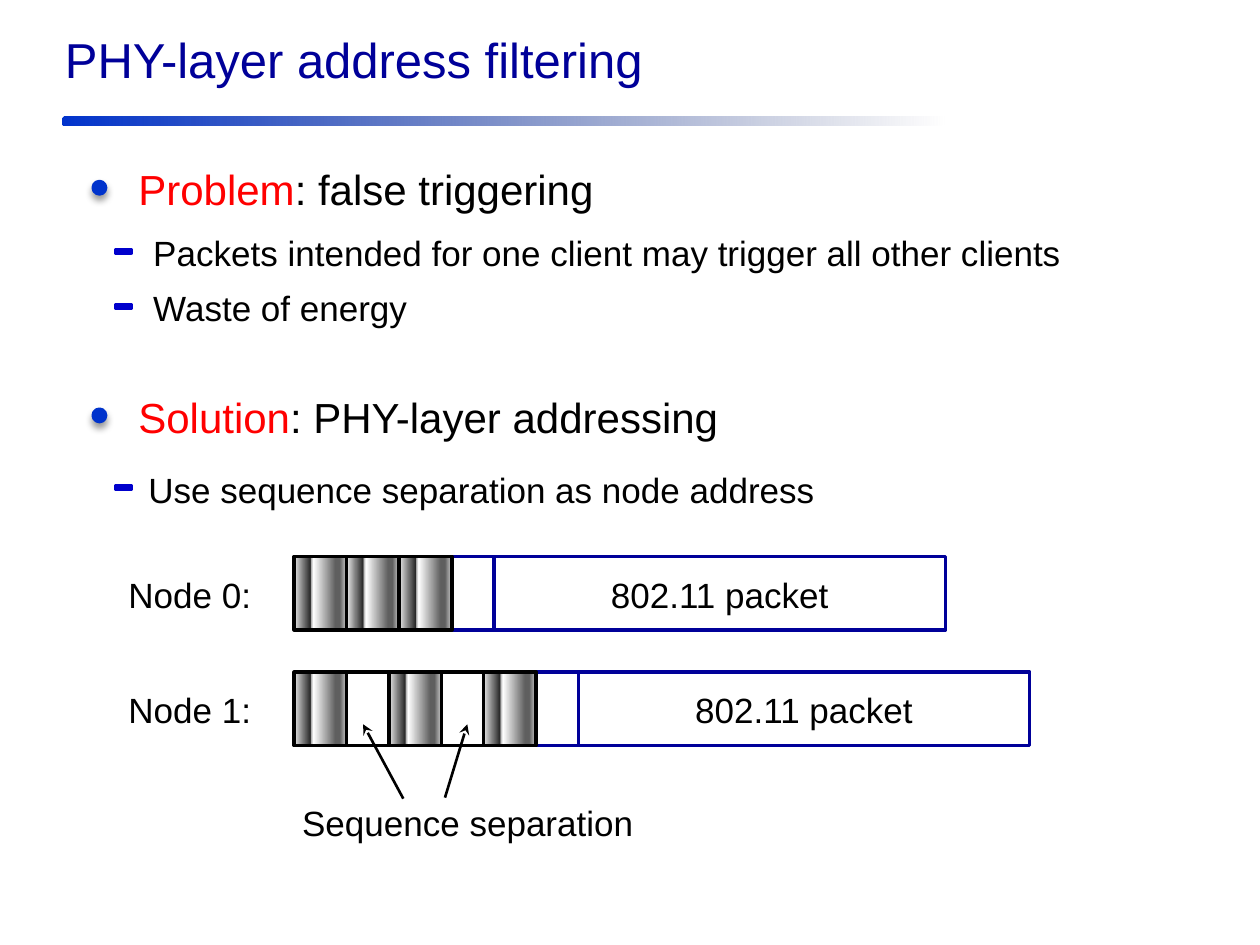
from lxml import etree
from pptx import Presentation
from pptx.dml.color import RGBColor
from pptx.enum.shapes import MSO_CONNECTOR, MSO_SHAPE
from pptx.enum.text import MSO_AUTO_SIZE, PP_ALIGN
from pptx.oxml.ns import qn
from pptx.util import Cm, Pt

RECT, OVAL, ROUND = MSO_SHAPE.RECTANGLE, MSO_SHAPE.OVAL, MSO_SHAPE.ROUNDED_RECTANGLE
LEFT, MID = PP_ALIGN.LEFT, PP_ALIGN.CENTER
GROW = MSO_AUTO_SIZE.SHAPE_TO_FIT_TEXT
LINE = MSO_CONNECTOR.STRAIGHT

COLORS = {"navy": "000099", "blue": "0033CC", "dash": "0000CC",
          "red": "FF0000", "black": "000000"}
FADE = [(0, "0033CC", 100), (100, "00185E", 0)]
METAL = [(0, "CBCBCB", 100), (13, "5F5F5F", 100), (21, "5F5F5F", 100),
         (63, "FFFFFF", 100), (67, "B2B2B2", 100), (69, "292929", 100),
         (82, "777777", 100), (100, "EAEAEA", 100)]

TITLE = "PHY-layer address filtering"
HEADS = [(3.18, "Problem", ": false triggering"),
         (7.77, "Solution", ": PHY-layer addressing")]
ITEMS = [(2.84, 4.55, "Packets intended for one client may trigger all other clients"),
         (2.84, 5.66, "Waste of energy"),
         (2.74, 9.31, "Use sequence separation as node address")]
NODES = [(11.22, "Node 0:", ["seq", "seq", "seq", "guard", "packet"]),
         (13.55, "Node 1:", ["seq", "gap", "seq", "gap", "seq", "guard", "packet"])]
PACKET = "802.11 packet"
NOTE = "Sequence separation"
ARROWS = [(8.13, 16.1, 7.32, 14.6), (8.97, 16.08, 9.42, 14.6)]

WIDTHS = {"seq": 1.06, "gap": 0.85, "guard": 0.85, "packet": 9.1}
EDGES = {"seq": "black", "gap": "black", "guard": "navy", "packet": "navy"}
START, TALL = 5.93, 1.48

deck = Presentation()
deck.slide_width, deck.slide_height = Cm(25.4), Cm(19.05)
slide = deck.slides.add_slide(deck.slide_layouts[6])
shapes = slide.shapes


def rgb(name):
    return RGBColor.from_string(COLORS[name])


def add_text(x, y, w, h, runs, size=20, align=LEFT):
    box = shapes.add_textbox(Cm(x), Cm(y), Cm(w), Cm(h))
    frame = box.text_frame
    frame.word_wrap = True
    frame.auto_size = GROW
    para = frame.paragraphs[0]
    para.alignment = align
    para.font.size = Pt(size)
    para.font.name = "Arial"
    for text, color in runs:
        run = para.add_run()
        run.text = text
        run.font.color.rgb = rgb(color)


def add_box(kind, x, y, w, h, fill=None, edge=None):
    box = shapes.add_shape(kind, Cm(x), Cm(y), Cm(w), Cm(h))
    box.shadow.inherit = False
    if fill:
        box.fill.solid()
        box.fill.fore_color.rgb = rgb(fill)
    else:
        box.fill.background()
    if edge:
        box.line.color.rgb = rgb(edge)
        box.line.width = Pt(2)
    else:
        box.line.fill.background()
    return box


def add_color(node, color, alpha):
    tint = etree.SubElement(node, qn("a:srgbClr"), val=color)
    if alpha < 100:
        etree.SubElement(tint, qn("a:alpha"), val=str(alpha * 1000))


def blend(box, stops, angle):
    box.fill.gradient()
    box.fill.gradient_angle = angle
    group = box.fill._xPr.find(".//" + qn("a:gsLst"))
    for old in list(group):
        group.remove(old)
    for pos, color, alpha in stops:
        stop = etree.SubElement(group, qn("a:gs"), pos=str(pos * 1000))
        add_color(stop, color, alpha)


def add_shade(box):
    effects = box._element.spPr.find(qn("a:effectLst"))
    shade = etree.SubElement(effects, qn("a:outerShdw"), blurRad=str(Pt(4)),
                             dist=str(Pt(3)), dir="5400000", rotWithShape="0")
    add_color(shade, COLORS["black"], 40)


def add_frame(y, label, cells):
    add_text(2.34, y + 0.21, 3.38, 1.12, [(label, "black")])
    x = START + sum(WIDTHS[cell] for cell in cells)
    for cell in reversed(cells):
        wide = WIDTHS[cell]
        x -= wide
        box = add_box(RECT, x, y, wide, TALL, edge=EDGES[cell])
        if cell == "seq":
            blend(box, METAL, 180)
        elif cell == "packet":
            add_text(x, y + 0.21, wide, 1.12, [(PACKET, "black")], align=MID)


def add_arrow(x1, y1, x2, y2):
    arrow = shapes.add_connector(LINE, Cm(x1), Cm(y1), Cm(x2), Cm(y2))
    arrow.line.color.rgb = rgb("black")
    arrow.line.width = Pt(1.5)
    etree.SubElement(arrow.line._get_or_add_ln(), qn("a:tailEnd"), type="stealth")
    etree.SubElement(arrow._element.spPr, qn("a:effectLst"))


rule = add_box(ROUND, 1.27, 2.36, 17.78, 0.18)
rule.adjustments[0] = 0.17
blend(rule, FADE, 0)
add_text(1.06, 0.48, 23.7, 1.45, [(TITLE, "navy")], 28)

for y, key, rest in HEADS:
    add_shade(add_box(OVAL, 1.88, y + 0.48, 0.25, 0.25, "blue", "blue"))
    add_text(2.54, y, 21.16, 1.27, [(key, "red"), (rest, "black")], 24)

for x, y, text in ITEMS:
    add_box(RECT, 2.34, y + 0.48, 0.3, 0.08, "dash", "dash")
    add_text(x, y, 20.96, 1.12, [(text, "black")])

for node in NODES:
    add_frame(*node)

add_text(5.84, 16.03, 7.49, 1.12, [(NOTE, "black")])
for ends in ARROWS:
    add_arrow(*ends)

deck.save("out.pptx")
